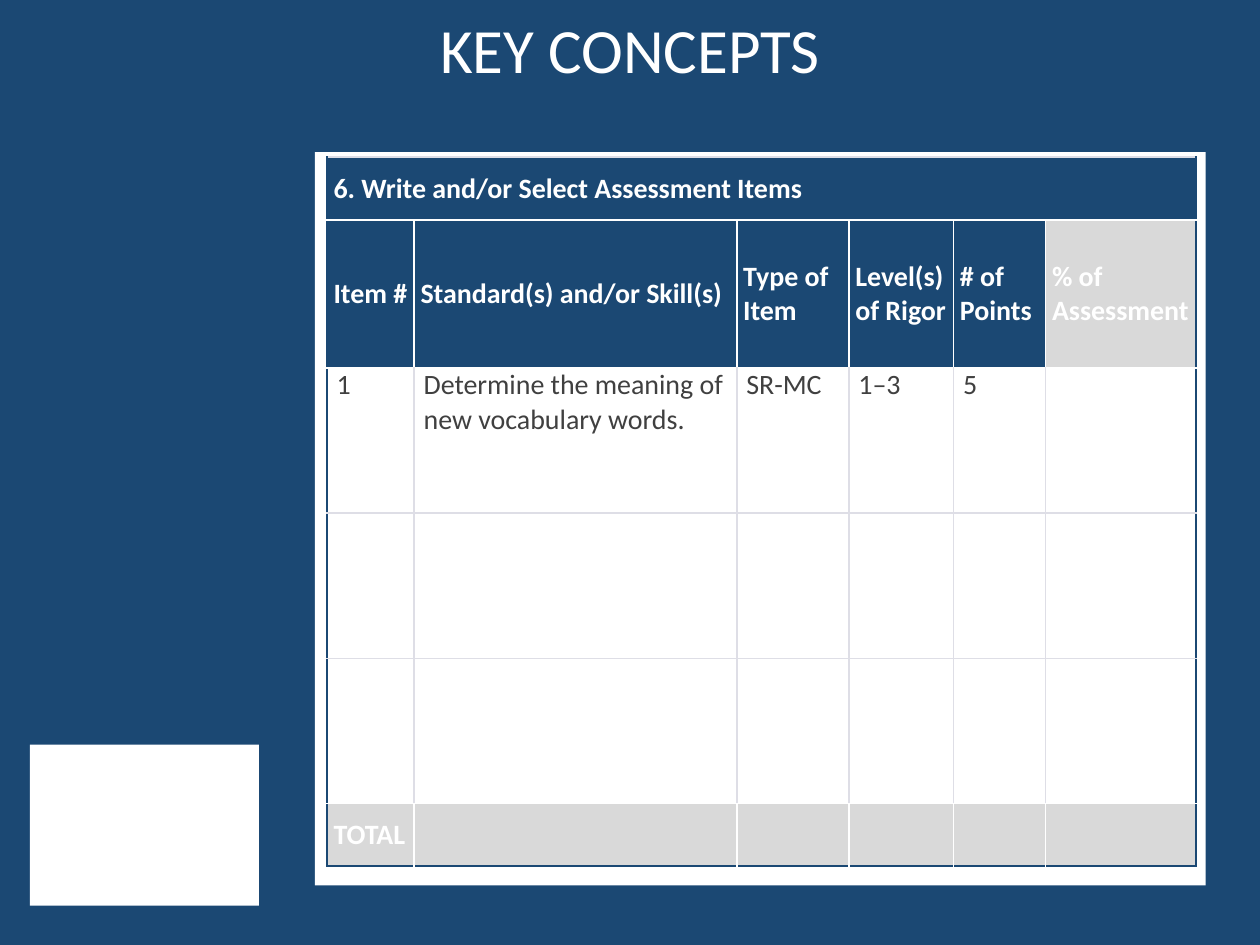
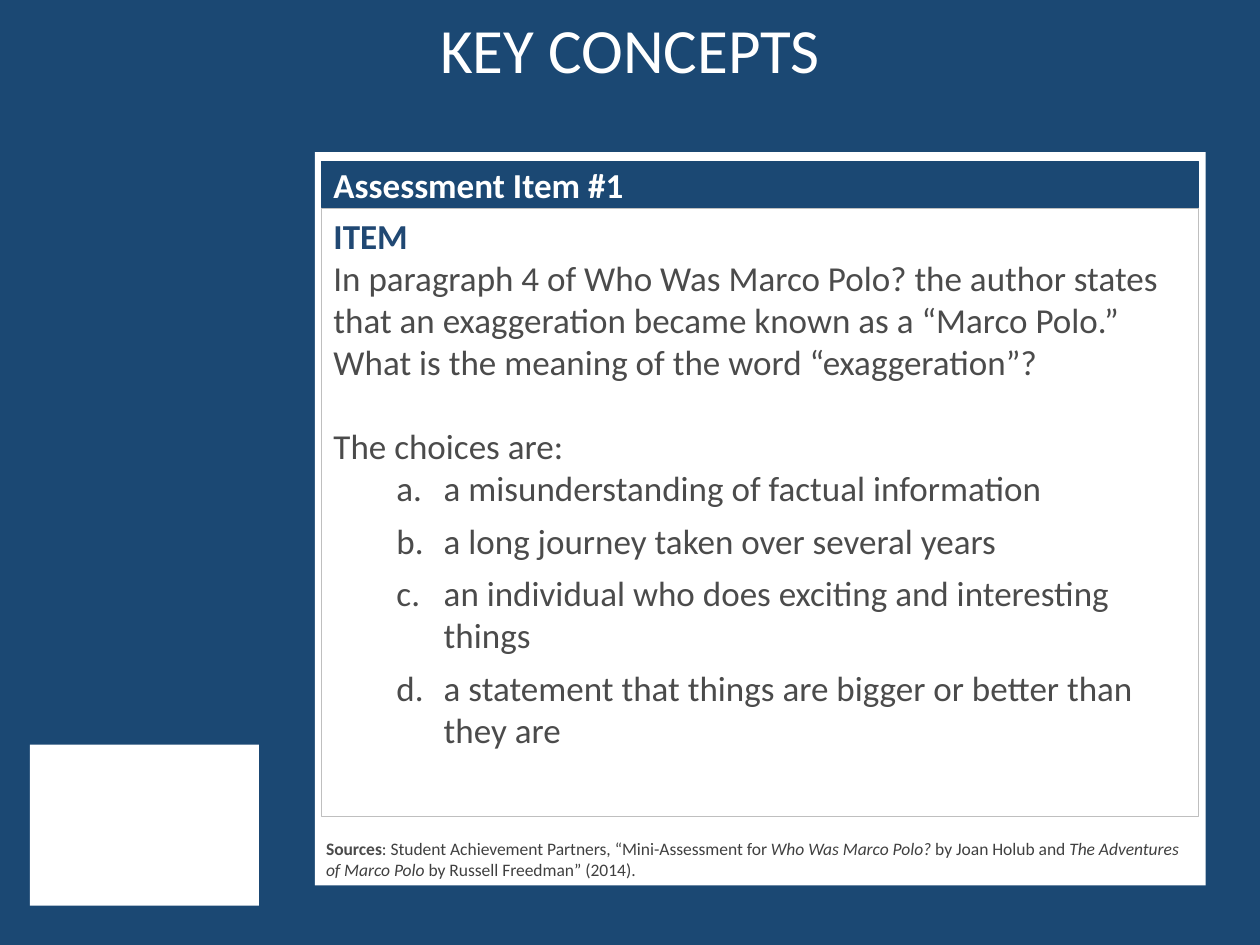
from lxml import etree
from pptx import Presentation
from pptx.dml.color import RGBColor
from pptx.enum.shapes import MSO_SHAPE
from pptx.enum.text import MSO_ANCHOR, PP_ALIGN
from pptx.oxml.ns import qn
from pptx.util import Pt

RECTANGLE = MSO_SHAPE.RECTANGLE
TOP, MIDDLE = MSO_ANCHOR.TOP, MSO_ANCHOR.MIDDLE
LEFT, CENTER = PP_ALIGN.LEFT, PP_ALIGN.CENTER

COLORS = {
    "navy": "1B4873",
    "heading": "204873",
    "white": "FFFFFF",
    "grey": "D9D9D9",
    "outline": "BFBFBF",
    "grid": "DEDEE6",
    "body": "4B4B4B",
    "dark": "404040",
}
FONT = "Calibri"
BLANK_LAYOUT = 6
SIDES = ("L", "R", "T", "B")

TITLE = {"size": 36, "color": "white"}
BANNER = {"size": 20, "color": "white", "bold": True}
ITEM_HEADING = {"size": 20, "color": "heading", "bold": True}
ITEM_BODY = {"size": 20, "color": "body"}
TABLE_HEADING = {"size": 16, "color": "white", "bold": True}
TABLE_BODY = {"size": 16, "color": "dark"}
SOURCE = {"size": 10, "color": "dark"}
SOURCE_TITLE = {**SOURCE, "italic": True}
SOURCE_LABEL = {"size": 10, "color": "body", "bold": True}

COLUMN_WIDTHS = (49.7, 184.4, 64.1, 59.8, 52.6, 85.8)
ROW_HEIGHTS = (36, 84.6, 82.9, 82.9, 82.9, 36)
ROW_EDGES = ("grid", "white", "white", "grid", "grid", "white", "navy")
HEADER_ROWS = (0, 1)
TOTAL_ROW = len(ROW_HEIGHTS) - 1
LAST_COLUMN = len(COLUMN_WIDTHS) - 1
TABLE_TEXT = (
    ("6. Write and/or Select Assessment Items",),
    ("Item #", "Standard(s) and/or Skill(s)", "Type of Item",
     "Level(s) of Rigor", "# of Points", "% of Assessment"),
    ("1", "Determine the meaning of new vocabulary words.", "SR-MC", "1–3", "5"),
    (),
    (),
    ("TOTAL",),
)

QUESTION = (
    "In paragraph 4 of Who Was Marco Polo? the author states that an "
    "exaggeration became known as a “Marco Polo.” What is the meaning "
    "of the word “exaggeration”?"
)
CHOICES = (
    "a misunderstanding of factual information",
    "a long journey taken over several years",
    "an individual who does exciting and interesting things",
    "a statement that things are bigger or better than they are",
)
SOURCES = (
    ("Sources", SOURCE_LABEL),
    (": Student Achievement Partners, “Mini-Assessment for ", SOURCE),
    ("Who Was Marco Polo?", SOURCE_TITLE),
    (" by Joan Holub and ", SOURCE),
    ("The Adventures of Marco Polo", SOURCE_TITLE),
    (" by Russell Freedman” (2014).", SOURCE),
)


def rgb(name):
    return RGBColor.from_string(COLORS[name])


class Deck:
    def __init__(self):
        self.presentation = Presentation()
        self.presentation.slide_width = Pt(720)
        self.presentation.slide_height = Pt(540)
        background = self.presentation.slide_master.background.fill
        background.solid()
        background.fore_color.rgb = rgb("navy")
        self.slide = None

    def add_slide(self, title):
        layout = self.presentation.slide_layouts[BLANK_LAYOUT]
        self.slide = self.presentation.slides.add_slide(layout)
        self.rectangle((180, 87, 509, 419), fill="white")
        self.rectangle((17, 425.5, 131, 92), fill="white")
        frame = self.text_box((0, 0.7, 720, 59), MIDDLE)
        self.paragraph(frame, [(title, TITLE)], alignment=CENTER, line_spacing=0.9)

    def rectangle(self, box, fill=None, line=None, anchor=TOP):
        shape = self.slide.shapes.add_shape(RECTANGLE, *map(Pt, box))
        shape.shadow.inherit = False
        if fill:
            shape.fill.solid()
            shape.fill.fore_color.rgb = rgb(fill)
        else:
            shape.fill.background()
        if line:
            shape.line.color.rgb = rgb(line)
            shape.line.width = Pt(0.5)
        else:
            shape.line.fill.background()
        shape.text_frame.vertical_anchor = anchor
        return shape.text_frame

    def text_box(self, box, anchor=TOP):
        frame = self.slide.shapes.add_textbox(*map(Pt, box)).text_frame
        frame.word_wrap = True
        frame.vertical_anchor = anchor
        return frame

    def paragraph(self, frame, runs, lettered=False, **layout):
        paragraph = frame.paragraphs[0]
        if paragraph.runs:
            paragraph = frame.add_paragraph()
        for name, value in {"alignment": LEFT, **layout}.items():
            setattr(paragraph, name, value)
        if lettered:
            properties = paragraph._p.get_or_add_pPr()
            properties.set("marL", str(Pt(63)))
            properties.set("indent", str(Pt(-27)))
            bullet = etree.SubElement(properties, qn("a:buAutoNum"))
            bullet.set("type", "alphaLcPeriod")
        for text, style in runs:
            run = paragraph.add_run()
            run.text = text
            values = {
                "name": FONT,
                "size": Pt(style["size"]),
                "bold": style.get("bold", False),
                "italic": style.get("italic", False),
            }
            for name, value in values.items():
                setattr(run.font, name, value)
            run.font.color.rgb = rgb(style["color"])

    def borders(self, cell, colors):
        properties = cell._tc.get_or_add_tcPr()
        for side, color in zip(SIDES, colors):
            width = Pt(1.5 if color == "navy" else 1)
            line = etree.SubElement(properties, qn(f"a:ln{side}"), w=str(width))
            fill = etree.SubElement(line, qn("a:solidFill"))
            etree.SubElement(fill, qn("a:srgbClr"), val=COLORS[color])

    def table(self, left, top):
        box = (left, top, sum(COLUMN_WIDTHS), sum(ROW_HEIGHTS))
        table = self.slide.shapes.add_table(
            len(ROW_HEIGHTS), len(COLUMN_WIDTHS), *map(Pt, box)).table
        table.first_row = table.horz_banding = False
        for column, width in zip(table.columns, COLUMN_WIDTHS):
            column.width = Pt(width)
        for row, height in zip(table.rows, ROW_HEIGHTS):
            row.height = Pt(height)
        table.cell(0, 0).merge(table.cell(0, LAST_COLUMN))
        for row, texts in enumerate(TABLE_TEXT):
            for column in range(len(COLUMN_WIDTHS)):
                text = texts[column] if column < len(texts) else ""
                self.cell(table.cell(row, column), row, column, text)

    def cell(self, cell, row, column, text):
        is_body = row not in HEADER_ROWS and row != TOTAL_ROW
        inner = "grid" if is_body else "white"
        at_right = column + cell.span_width > LAST_COLUMN
        self.borders(cell, (
            "navy" if column == 0 else inner,
            "navy" if at_right else inner,
            ROW_EDGES[row],
            ROW_EDGES[row + 1],
        ))
        is_grey = row == TOTAL_ROW or (row, column) == (1, LAST_COLUMN)
        cell.fill.solid()
        cell.fill.fore_color.rgb = rgb("white" if is_body else "grey" if is_grey else "navy")
        side, edge = (5.4, 0) if is_body else (3.6, 3.6)
        layout = {
            "margin_left": Pt(side),
            "margin_right": Pt(side),
            "margin_top": Pt(edge),
            "margin_bottom": Pt(edge),
            "vertical_anchor": TOP if is_body else MIDDLE,
        }
        for name, value in layout.items():
            setattr(cell, name, value)
        if text:
            style = TABLE_BODY if is_body else TABLE_HEADING
            self.paragraph(cell.text_frame, [(text, style)])


def add_item_table(deck):
    deck.add_slide("KEY CONCEPTS")
    deck.table(187, 89.8)


def add_assessment_item(deck):
    deck.add_slide("KEY CONCEPTS")
    item = deck.rectangle((183.5, 119, 501.5, 347.5), line="outline")
    deck.paragraph(item, [("ITEM", ITEM_HEADING)])
    deck.paragraph(item, [(QUESTION, ITEM_BODY)])
    deck.paragraph(item, [("The choices are:", ITEM_BODY)], space_before=Pt(24))
    for choice in CHOICES:
        deck.paragraph(item, [(choice, ITEM_BODY)], lettered=True, space_after=Pt(6))
    banner = deck.rectangle((183.5, 92.3, 501.5, 26), "navy", "navy", MIDDLE)
    deck.paragraph(banner, [("Assessment Item #1", BANNER)])
    sources = deck.text_box((179.2, 475.2, 511, 31.5))
    deck.paragraph(sources, SOURCES)


def main():
    deck = Deck()
    add_item_table(deck)
    add_assessment_item(deck)
    deck.presentation.save("out.pptx")


if __name__ == "__main__":
    main()
